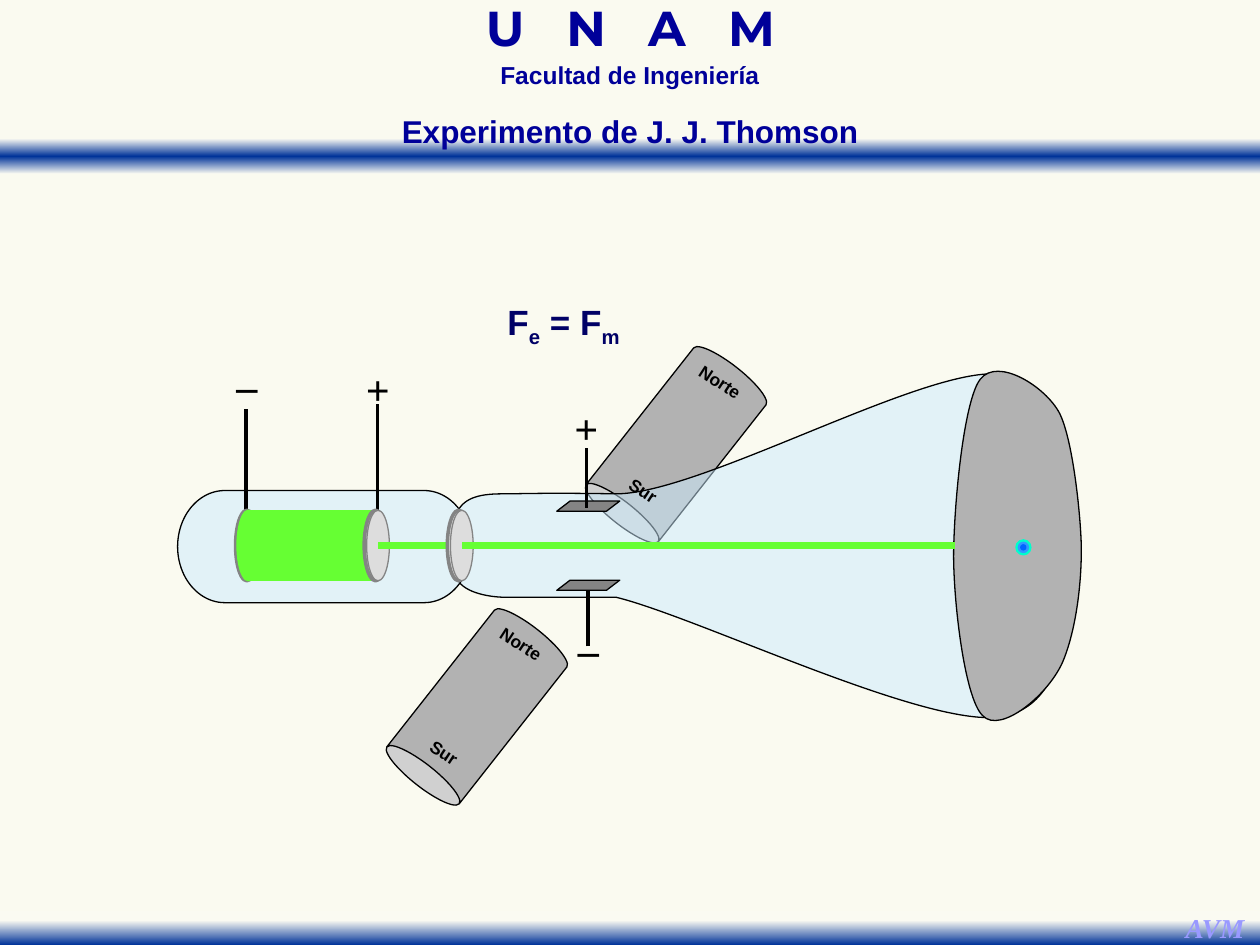
"""Builds the slide on J. J. Thomson's cathode ray experiment."""
from lxml import etree
from pptx import Presentation
from pptx.dml.color import RGBColor
from pptx.enum.shapes import MSO_CONNECTOR, MSO_SHAPE
from pptx.enum.text import PP_ALIGN
from pptx.oxml.ns import qn
from pptx.util import Pt

RECT, OVAL, CAN = MSO_SHAPE.RECTANGLE, MSO_SHAPE.OVAL, MSO_SHAPE.CAN
PILL, PLATE = MSO_SHAPE.FLOWCHART_TERMINATOR, MSO_SHAPE.PARALLELOGRAM
STRAIGHT, CENTER = MSO_CONNECTOR.STRAIGHT, PP_ALIGN.CENTER

CREAM = RGBColor(0xFA, 0xFA, 0xF0)
PALE = RGBColor(0xFA, 0xFA, 0xF2)
BLUE = RGBColor(0x00, 0x33, 0x99)
TITLE = RGBColor(0x00, 0x00, 0x99)
NAVY = RGBColor(0x00, 0x00, 0x66)
LILAC = RGBColor(0x99, 0x99, 0xFF)
BLACK = RGBColor(0x00, 0x00, 0x00)
GRAY = RGBColor(0xB2, 0xB2, 0xB2)
DARK = RGBColor(0x84, 0x84, 0x84)
SILVER = RGBColor(0xDD, 0xDD, 0xDD)
GLASS = RGBColor(0xCC, 0xEC, 0xFF)
GREEN = RGBColor(0x66, 0xFF, 0x33)
RINGS = [(8.6, RGBColor(0x00, 0xFF, 0xCC)), (5.8, RGBColor(0x33, 0x99, 0xFF)),
         (2.9, RGBColor(0x00, 0x66, 0xFF))]

BANDS = [((0, 79.2, 720, 20.2), [(0, PALE), (50, BLUE), (100, PALE)]),
         ((0, 520.6, 720, 19.4), [(28, PALE), (100, BLUE)])]
HEADS = [("Facultad de Ingeniería", (231.5, 35.3, 257, 19.4), "Arial", 14, TITLE, 0.7),
         ("Experimento de J. J. Thomson", (204.2, 60.5, 311.8, 28.8), "Arial", 18, TITLE, 1)]
SIGNS = [("+", (202, 204.1)), ("_", (127.4, 193.7)),
         ("+", (321.1, 226.5)), ("_", (322.5, 344.9))]
MAGNETS = [(360, 198), (246.2, 347.8)]
POLES = [("Norte", 31.4, 10.6, 40.3), ("Sur", -7.9, 72.6, 31)]
TUBE = [(261.4, 292.3), (265.7, 283.7), (275.8, 282.2), (287.3, 282.2),
        (298.1, 282.2), (309.6, 281.5), (352.1, 282.2),
        (400.3, 282.2), (527.8, 209.5), (571, 213.8),
        (614.2, 217.4), (611.3, 273.6), (611.3, 306),
        (611.3, 339.1), (614.2, 403.9), (571, 409.7),
        (527.8, 415.4), (398.9, 352.8), (352.1, 341.3),
        (311, 341.3), (296.6, 341.3), (288.7, 341.3),
        (280.8, 341.3), (265.7, 339.1), (261.4, 331.2)]
TUBE_BOX = (261.4, 209.5, 352.1, 205.2)
SCREEN = [(545, 313.2), (545.8, 280.1), (551.5, 227.5), (560.2, 216.7),
          (570.2, 203.8), (597.6, 221), (605.5, 236.2),
          (612.7, 250.6), (617, 289.4), (617.8, 308.9),
          (618.5, 329), (615.6, 357.8), (607.7, 377.3),
          (599.8, 396.7), (571.7, 419.8), (561.6, 409),
          (550.8, 398.9), (544.3, 339.1), (545, 313.2)]
SCREEN_BOX = (544.3, 203.8, 74.2, 216)
DISC_TOP, DISC_W, DISC_H = 291.6, 13, 40.3
DISCS = [(208.1, 209.5), (255.6, 257.4)]
HOLES = (216, 264.2)
BEAM_Y = 312

deck = Presentation()
deck.slide_width, deck.slide_height = Pt(720), Pt(540)
slide = deck.slides.add_slide(deck.slide_layouts[6])
slide.background.fill.solid()
slide.background.fill.fore_color.rgb = CREAM
shapes = slide.shapes


def paint(shape, fill, line=BLACK, width=0.75, alpha=None):
    shape.shadow.inherit = False
    shape.fill.solid()
    shape.fill.fore_color.rgb = fill
    shape.line.color.rgb = line
    shape.line.width = Pt(width)
    if alpha:
        color = shape.fill._xPr.find(qn("a:solidFill"))[0]
        etree.SubElement(color, qn("a:alpha"), val=str(alpha * 1000))


def draw(kind, box, fill, line=BLACK, width=0.75, alpha=None, turn=0, adj=None):
    shape = shapes.add_shape(kind, *map(Pt, box))
    paint(shape, fill, line, width, alpha)
    shape.rotation = turn
    if adj:
        shape.adjustments[0] = adj


def band(box, stops):
    shape = shapes.add_shape(RECT, *map(Pt, box))
    shape.shadow.inherit = False
    shape.line.fill.background()
    shape.fill.gradient()
    shape.fill.gradient_angle = 270
    row = shape.fill._xPr.find(qn("a:gradFill")).find(qn("a:gsLst"))
    for old in list(row):
        row.remove(old)
    for pos, color in stops:
        stop = etree.SubElement(row, qn("a:gs"), pos=str(pos * 1000))
        etree.SubElement(stop, qn("a:srgbClr"), val=str(color))


def outline(nodes, box, fill, alpha=None):
    left, top, wide, high = map(Pt, box)
    pen = shapes.build_freeform(left, top)
    pen.add_line_segments([(left + wide, top), (left + wide, top + high)])
    shape = pen.convert_to_shape()
    path = next(shape._element.iter(qn("a:path")))
    for old in list(path):
        path.remove(old)
    steps = [("a:moveTo", nodes[:1])]
    steps += [("a:cubicBezTo", nodes[i:i + 3]) for i in range(1, len(nodes), 3)]
    for tag, dots in steps:
        step = etree.SubElement(path, qn(tag))
        for x, y in dots:
            etree.SubElement(step, qn("a:pt"), x=str(Pt(x) - left), y=str(Pt(y) - top))
    etree.SubElement(path, qn("a:close"))
    paint(shape, fill, alpha=alpha)


def wire(x1, y1, x2, y2, color=BLACK, width=2):
    line = shapes.add_connector(STRAIGHT, *map(Pt, (x1, y1, x2, y2)))
    line.line.color.rgb = color
    line.line.width = Pt(width)
    etree.SubElement(line._element.spPr, qn("a:effectLst"))


def write(parts, box, face, size, color, gap=1, turn=0, slant=False):
    note = shapes.add_textbox(*map(Pt, box))
    note.rotation = turn
    note.text_frame.word_wrap = False
    para = note.text_frame.paragraphs[0]
    para.alignment, para.line_spacing = CENTER, gap
    for part in parts:
        run = para.add_run()
        run.text = part
        font = run.font
        font.name, font.size, font.bold, font.italic = face, Pt(size), True, slant
        font.color.rgb = color
    return para.runs


def magnet(spot):
    draw(CAN, (*spot, 52.6, 112.3), GRAY, turn=218.2, adj=0.244)


for box, stops in BANDS:
    band(box, stops)
name = write(["U N A ", "M"], (219.4, 4.3, 281.5, 31), "Montserrat", 28, TITLE, 0.7)
name[0].font._element.set("spc", "810")
write(["AVM"], (669.8, 517, 49, 26.6), "Times New Roman", 15.6, LILAC, slant=True)

magnet(MAGNETS[0])
outline(TUBE, TUBE_BOX, GLASS, 50)
draw(PILL, (101.5, 280.3, 167.8, 64.1), GLASS, alpha=50)
wire(140.7, 292.3, 140.7, 233.6)
wire(215.8, 292.3, 215.8, 231.1)
draw(OVAL, (134.6, DISC_TOP, DISC_W, DISC_H), SILVER, DARK, 2)
draw(OVAL, (135.4, DISC_TOP, DISC_W, DISC_H), GREEN, GREEN)
draw(RECT, (143.3, DISC_TOP, 70.6, DISC_H), GREEN, GREEN)
for i, pair in enumerate(DISCS):
    for left, width in zip(pair, (2, 0.75)):
        draw(OVAL, (left, DISC_TOP, DISC_W, DISC_H), SILVER, DARK, width)
    draw(RECT, (HOLES[i], 310.5, 1.4, 2.9), NAVY, BLACK, 0.5)
    if i == 0:
        wire(267.8, BEAM_Y, 216, BEAM_Y, GREEN, 4)

draw(PLATE, (318.2, 286.3, 36, 5.8), DARK, adj=1.312)
wire(335.2, 290.2, 335.2, 255.8)
wire(336, 369.4, 336, 335.5)
draw(PLATE, (318.2, 331.5, 36, 5.8), DARK, adj=1.312)

outline(SCREEN, SCREEN_BOX, GRAY)
magnet(MAGNETS[1])
for left, top in MAGNETS:
    for pole, dx, dy, wide in POLES:
        write([pole], (left + dx, top + dy, wide, 19.4), "Arial", 10, BLACK, turn=33.2)
for size, color in RINGS:
    draw(OVAL, (584.8 - size / 2, 312.8 - size / 2, size, size), color, color)
for sign, spot in SIGNS:
    write([sign], (*spot, 27.4, 36), "Times New Roman", 24, BLACK)
force = write(["F", "e", " = F", "m"], (279.2, 168.2, 85.7, 31), "Arial", 20, NAVY)
for run in force[1::2]:
    run.font._element.set("baseline", "-25000")
wire(545.8, BEAM_Y, 264.2, BEAM_Y, GREEN, 4)
for text, *rest in HEADS:
    write([text], *rest)

deck.save("out.pptx")
